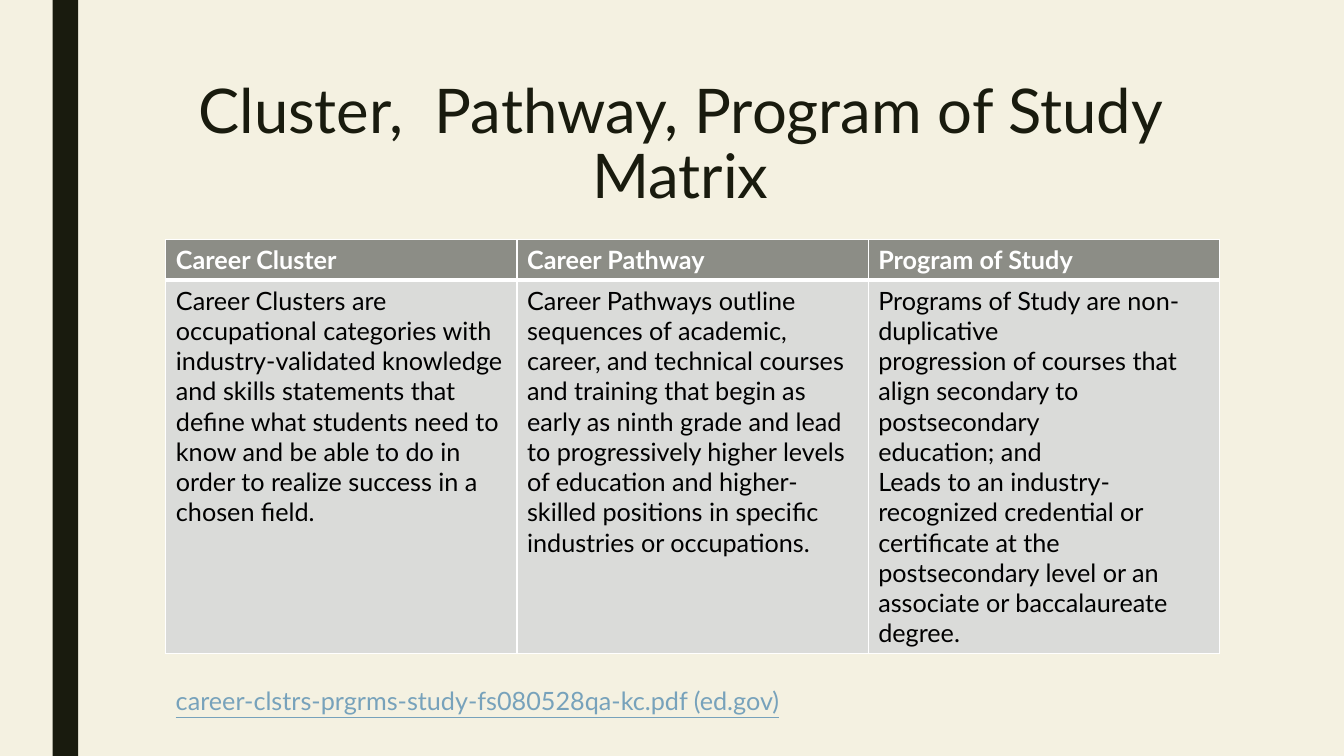
from lxml import etree
from pptx import Presentation
from pptx.dml.color import RGBColor
from pptx.enum.shapes import MSO_SHAPE
from pptx.enum.text import MSO_ANCHOR, PP_ALIGN
from pptx.oxml.ns import qn
from pptx.util import Cm, Pt

RECTANGLE = MSO_SHAPE.RECTANGLE
TOP = MSO_ANCHOR.TOP
CENTER = PP_ALIGN.CENTER

TITLE = "Cluster,  Pathway, Program of Study Matrix"
MATRIX = {
    "Career Cluster": [
        "Career Clusters are occupational categories with industry-validated knowledge "
        "and skills statements that define what students need to know and be able to do "
        "in order to realize success in a chosen field.",
    ],
    "Career Pathway": [
        "Career Pathways outline sequences of academic, career, and technical courses "
        "and training that begin as early as ninth grade and lead to progressively higher "
        "levels of education and higher-skilled positions in specific industries or "
        "occupations.",
    ],
    "Program of Study": [
        "Programs of Study are non-duplicative",
        "progression of courses that align secondary to postsecondary",
        "education; and",
        "Leads to an industry-recognized credential or certificate at the",
        "postsecondary level or an associate or baccalaureate degree.",
    ],
}
REFERENCE = "career-clstrs-prgrms-study-fs080528qa-kc.pdf (ed.gov)"

FONT = "Lato"
COLORS = {
    "background": "F4F1E1",
    "dark": "191B0E",
    "header": "8C8D86",
    "body": "DADBD9",
    "white": "FFFFFF",
    "black": "000000",
    "reference": "77A2BB",
}
HEADER_HEIGHT, BODY_HEIGHT = Cm(1.02), Cm(9.4)
COLUMN_WIDTH = Cm(8.85)
MATRIX_LEFT, MATRIX_TOP = Cm(4.18), Cm(6.04)


def rgb(name):
    return RGBColor.from_string(COLORS[name])


def write(frame, lines, size, color, bold=False):
    frame.text = "\n".join(lines)
    for paragraph in frame.paragraphs:
        font = paragraph.font
        font.name, font.size, font.bold = FONT, Pt(size), bold
        font.color.rgb = rgb(color)


def set_borders(cell, top, bottom):
    properties = cell._tc.get_or_add_tcPr()
    widths = {"a:lnL": 1, "a:lnR": 1, "a:lnT": top, "a:lnB": bottom}
    for position, (side, width) in enumerate(widths.items()):
        line = etree.Element(qn(side), w=str(Pt(width)))
        fill = etree.SubElement(line, qn("a:solidFill"))
        etree.SubElement(fill, qn("a:srgbClr"), val=COLORS["white"])
        properties.insert(position, line)


def fill_cell(cell, lines, fill, color, bold, top, bottom):
    write(cell.text_frame, lines, 18, color, bold)
    cell.fill.solid()
    cell.fill.fore_color.rgb = rgb(fill)
    set_borders(cell, top, bottom)


def main():
    deck = Presentation()
    deck.slide_width, deck.slide_height = Cm(33.87), Cm(19.05)
    slide = deck.slides.add_slide(deck.slide_layouts[5])
    slide.background.fill.solid()
    slide.background.fill.fore_color.rgb = rgb("background")

    side_bar = slide.shapes.add_shape(RECTANGLE, Cm(1.33), 0, Cm(0.64), deck.slide_height)
    side_bar.shadow.inherit = False
    side_bar.fill.solid()
    side_bar.fill.fore_color.rgb = rgb("dark")
    side_bar.line.fill.background()

    title = slide.shapes.title
    title.left, title.top, title.width, title.height = Cm(3.81), Cm(1.9), Cm(26.67), Cm(4.11)
    write(title.text_frame, [TITLE], 44, "dark")
    title.text_frame.vertical_anchor = TOP
    title.text_frame.word_wrap = True
    title.text_frame.paragraphs[0].alignment = CENTER
    title.text_frame.paragraphs[0].line_spacing = 0.89

    matrix = slide.shapes.add_table(
        2, len(MATRIX), MATRIX_LEFT, MATRIX_TOP,
        COLUMN_WIDTH * len(MATRIX), HEADER_HEIGHT + BODY_HEIGHT,
    ).table
    matrix.rows[0].height, matrix.rows[1].height = HEADER_HEIGHT, BODY_HEIGHT
    for column, (heading, description) in enumerate(MATRIX.items()):
        matrix.columns[column].width = COLUMN_WIDTH
        fill_cell(matrix.cell(0, column), [heading], "header", "white", True, 1, 3)
        fill_cell(matrix.cell(1, column), description, "body", "black", False, 3, 1)

    reference = slide.shapes.add_textbox(MATRIX_LEFT, Cm(17.15), Cm(16.94), Cm(1.03))
    reference.text_frame.word_wrap = True
    write(reference.text_frame, [REFERENCE], 18, "reference")
    reference.text_frame.paragraphs[0].font.underline = True

    deck.save("out.pptx")


if __name__ == "__main__":
    main()
